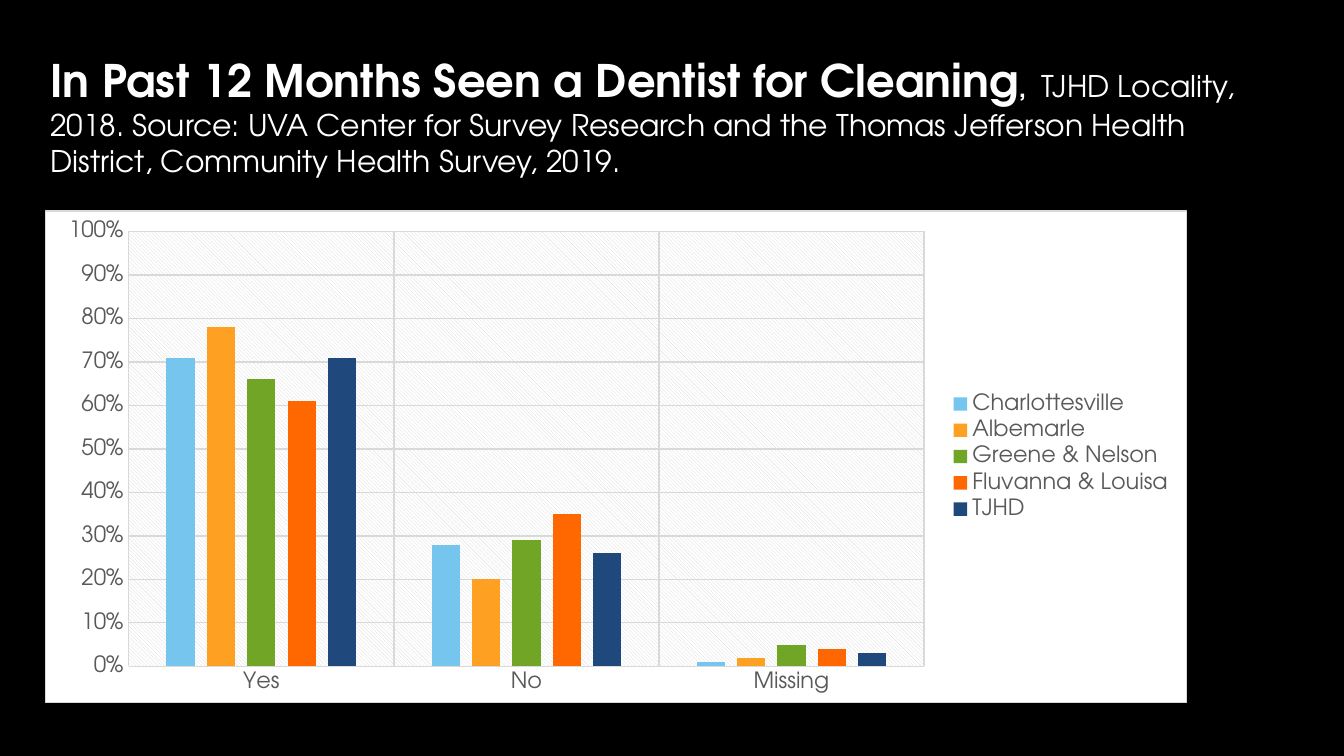
import pptx
import pptx.chart.data
import pptx.dml.color
import pptx.enum.chart
import pptx.enum.text
import pptx.oxml
import pptx.oxml.ns
import pptx.util

FONT = "TeX Gyre Adventor"
GRID, LABEL, WHITE, BLACK = "D9D9D9", "595959", "FFFFFF", "000000"


def color(hex_value):
    return pptx.dml.color.RGBColor.from_string(hex_value)


def chart_xml(body):
    names = pptx.oxml.ns.nsdecls("c", "a")
    return pptx.oxml.parse_xml(body.replace(">", f" {names}>", 1))


# Widescreen page, 16 to 9
deck = pptx.Presentation()
deck.slide_width = pptx.util.Inches(10)
deck.slide_height = deck.slide_width * 9 // 16
width, height = deck.slide_width, deck.slide_height
page = deck.slides.add_slide(deck.slide_layouts[6])
page.background.fill.solid()
page.background.fill.fore_color.rgb = color(BLACK)
left = width // 30

# Title and source
box = page.shapes.add_textbox(left, int(height * 0.063), width - 2 * left, int(height * 0.245))
box.fill.solid()
box.fill.fore_color.rgb = color(BLACK)
frame = box.text_frame
frame.word_wrap = True
frame.vertical_anchor = pptx.enum.text.MSO_ANCHOR.TOP
frame.margin_left = frame.margin_right = pptx.util.Inches(0.04)
frame.margin_top = frame.margin_bottom = pptx.util.Inches(0.04)
para = frame.paragraphs[0]
for text, size, bold in [
    ("In Past 12 Months Seen a Dentist for Cleaning", 24, True),
    (", ", 14, True),
    (" TJHD Locality, 2018. Source: UVA Center for Survey Research and the "
     "Thomas Jefferson Health District, Community Health Survey, 2019.", 16, False),
]:
    span = para.add_run()
    span.text = text
    span.font.name = FONT
    span.font.size = pptx.util.Pt(size)
    span.font.bold = bold
    span.font.color.rgb = color(WHITE)

# Chart data
localities = [
    ("Charlottesville", (0.71, 0.28, 0.01), "76C5EF"),
    ("Albemarle", (0.78, 0.20, 0.02), "FEA022"),
    ("Greene & Nelson", (0.66, 0.29, 0.05), "70A525"),
    ("Fluvanna & Louisa", (0.61, 0.35, 0.04), "FF6700"),
    ("TJHD", (0.71, 0.26, 0.03), "1F497D"),
]
data = pptx.chart.data.CategoryChartData(number_format="0%")
data.categories = ["Yes", "No", "Missing"]
for name, shares, _ in localities:
    data.add_series(name, shares)
chart = page.shapes.add_chart(
    pptx.enum.chart.XL_CHART_TYPE.COLUMN_CLUSTERED,
    left, int(height * 0.278), int(width * 0.85), int(height * 0.652), data,
).chart
chart.has_title = False
chart.has_legend = True
chart.legend.position = pptx.enum.chart.XL_LEGEND_POSITION.RIGHT
chart.legend.include_in_layout = False

# Columns
plot = chart.plots[0]
plot.gap_width = 267
plot.overlap = -43
plot.vary_by_categories = False
for series, (_, _, fill) in zip(plot.series, localities):
    series.format.fill.solid()
    series.format.fill.fore_color.rgb = color(fill)

# Axes
for axis in (chart.category_axis, chart.value_axis):
    axis.major_tick_mark = axis.minor_tick_mark = pptx.enum.chart.XL_TICK_MARK.NONE
    axis.has_major_gridlines = True
    for line in (axis.major_gridlines.format.line, axis.format.line):
        line.color.rgb = color(GRID)
        line.width = pptx.util.Pt(0.75)
chart.value_axis.format.line.fill.background()
chart.value_axis.maximum_scale = 1
chart.value_axis.major_unit = 0.1
chart.value_axis.tick_labels.number_format = "0%"
chart.value_axis.tick_labels.number_format_is_linked = False

# Chart fonts
for font, size, ink in [
    (chart.font, 10, WHITE),
    (chart.category_axis.tick_labels.font, 12, LABEL),
    (chart.value_axis.tick_labels.font, 12, LABEL),
    (chart.legend.font, 12, LABEL),
]:
    font.name = FONT
    font.size = pptx.util.Pt(size)
    font.color.rgb = color(ink)

# Plot area: position and hatched fill
area = chart.element.chart.plotArea
for old in area.findall(pptx.oxml.ns.qn("c:layout")):
    area.remove(old)
area.insert(0, chart_xml(
    '<c:layout><c:manualLayout><c:layoutTarget val="inner"/>'
    '<c:xMode val="edge"/><c:yMode val="edge"/>'
    '<c:x val="0.073"/><c:y val="0.042"/><c:w val="0.697"/><c:h val="0.885"/>'
    '</c:manualLayout></c:layout>'))
area.append(chart_xml(
    '<c:spPr><a:pattFill prst="ltDnDiag">'
    f'<a:fgClr><a:srgbClr val="{GRID}"/></a:fgClr>'
    f'<a:bgClr><a:srgbClr val="{WHITE}"/></a:bgClr></a:pattFill></c:spPr>'))

# Chart background and border
chart.element.chart.addnext(chart_xml(
    f'<c:spPr><a:solidFill><a:srgbClr val="{WHITE}"/></a:solidFill>'
    f'<a:ln w="9525"><a:solidFill><a:srgbClr val="{GRID}"/></a:solidFill></a:ln></c:spPr>'))

deck.save("out.pptx")
